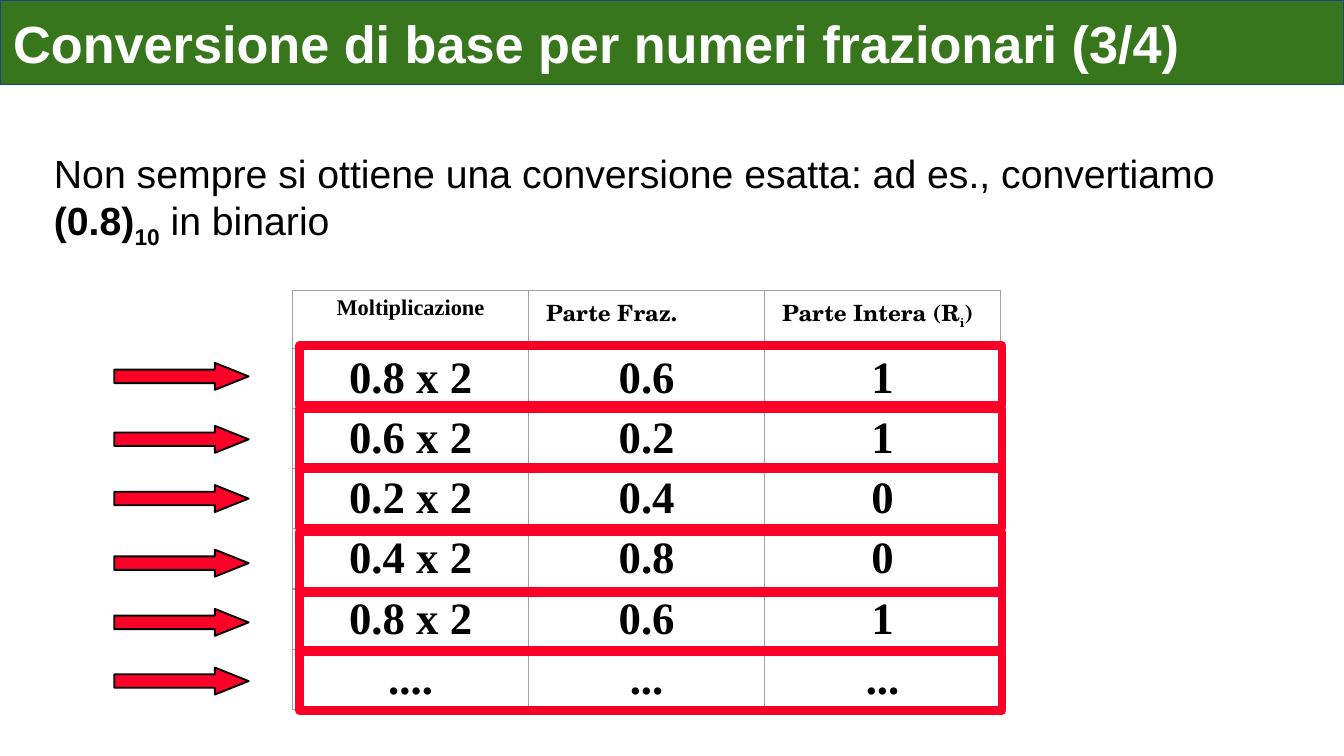
from lxml.etree import SubElement
from pptx import Presentation
from pptx.dml.color import RGBColor
from pptx.enum.shapes import MSO_SHAPE
from pptx.enum.text import MSO_ANCHOR, MSO_AUTO_SIZE, PP_ALIGN
from pptx.oxml import parse_xml
from pptx.oxml.ns import nsdecls, qn
from pptx.util import Cm, Pt

HUES = {"green": "38761D", "navy": "1C4587", "red": "FC0128",
        "grey": "A0A0A0", "black": "000000", "white": "FFFFFF"}
HEAD = ["Moltiplicazione", "Parte Fraz.", "Parte Intera (R"]
ROWS = [["0.8 x 2", "0.6", "1"],
        ["0.6 x 2", "0.2", "1"],
        ["0.2 x 2", "0.4", "0"],
        ["0.4 x 2", "0.8", "0"],
        ["0.8 x 2", "0.6", "1"],
        ["....", "...", "..."]]
TOPS = [6.53, 7.72, 8.84, 10.06, 11.18, 12.29]  # one per marked row


def hue(name):
    return RGBColor.from_string(HUES[name])


def style(run, size, font="Arial", color="black", bold=False, sub=False):
    run.font.size, run.font.name, run.font.bold = Pt(size), font, bold
    run.font.color.rgb = hue(color)
    if sub:
        run._r.get_or_add_rPr().set("baseline", "-25000")


def add_run(para, text, size, **look):
    run = para.add_run()
    run.text = text
    style(run, size, **look)


def pad(item, side, top, base):
    item.margin_left = item.margin_right = Cm(side)
    item.margin_top, item.margin_bottom = Cm(top), Cm(base)


def outline(shape, color, width):
    shape.line.color.rgb = hue(color)
    shape.line.width = Pt(width)


def add_title(slide, x, y, w, h):
    bar = slide.shapes.title
    bar.left, bar.top, bar.width, bar.height = Cm(x), Cm(y), Cm(w), Cm(h)
    bar.fill.solid()
    bar.fill.fore_color.rgb = hue("green")
    outline(bar, "navy", 0.75)
    frame = bar.text_frame
    frame.text = "Conversione di base per numeri frazionari (3/4)"
    frame.auto_size = MSO_AUTO_SIZE.NONE
    frame.vertical_anchor = MSO_ANCHOR.MIDDLE
    pad(frame, 0.25, 0.25, 0.25)
    para = frame.paragraphs[0]
    para.alignment = PP_ALIGN.LEFT
    style(para.runs[0], 28, color="white", bold=True)


def add_intro(slide, x, y, w, h):
    frame = slide.shapes.add_textbox(Cm(x), Cm(y), Cm(w), Cm(h)).text_frame
    frame.word_wrap = True
    pad(frame, 0.23, 0.1, 0.1)
    para = frame.paragraphs[0]
    add_run(para, "Non sempre si ottiene una conversione esatta: "
                  "ad es., convertiamo ", 21)
    add_run(para, "(0.8)", 21, bold=True)
    add_run(para, "10", 21, bold=True, sub=True)
    add_run(para, " in binario", 21)


def add_edges(cell):
    props = cell._tc.get_or_add_tcPr()
    for spot, side in enumerate("LRTB"):
        edge = parse_xml(f'<a:ln{side} {nsdecls("a")} w="9525"/>')
        fill = SubElement(edge, qn("a:solidFill"))
        SubElement(fill, qn("a:srgbClr")).set("val", HUES["grey"])
        props.insert(spot, edge)


def add_grid(slide, x, y, w, h, top):
    """Table in the given box; top is the height of the heading row."""
    grid = slide.shapes.add_table(len(ROWS) + 1, len(HEAD), Cm(x), Cm(y),
                                  Cm(w), Cm(h)).table
    grid.first_row = grid.horz_banding = False
    for col in grid.columns:
        col.width = Cm(w / len(HEAD))
    for r, texts in enumerate([HEAD] + ROWS):
        grid.rows[r].height = Cm(top if r == 0 else (h - top) / len(ROWS))
        for c, text in enumerate(texts):
            cell = grid.cell(r, c)
            cell.fill.background()
            add_edges(cell)
            pad(cell, 0.33, 0.1, 0)
            para = cell.text_frame.paragraphs[0]
            named = r == 0 and c > 0
            font = "TeX Gyre Schola" if named else "Times New Roman"
            para.alignment = PP_ALIGN.JUSTIFY if named else PP_ALIGN.CENTER
            add_run(para, text, 12 if r == 0 else 24, font=font, bold=True)
    # Subscript that closes the last heading
    para = grid.cell(0, len(HEAD) - 1).text_frame.paragraphs[0]
    add_run(para, "i", 12, font="TeX Gyre Schola", bold=True, sub=True)
    add_run(para, ")", 12, font="TeX Gyre Schola", bold=True)


def add_mark(slide, x, y, w, h):
    """Red frame around a row, with an arrow at the left of the box."""
    shapes = slide.shapes
    frame = shapes.add_shape(MSO_SHAPE.RECTANGLE, Cm(x + 3.5), Cm(y),
                             Cm(w - 3.5), Cm(h))
    frame.fill.background()
    outline(frame, "red", 4.5)
    arrow = shapes.add_shape(MSO_SHAPE.RIGHT_ARROW, Cm(x), Cm(y + 0.33),
                             Cm(2.54), Cm(0.51))
    arrow.adjustments[0], arrow.adjustments[1] = 0.5, 1.25
    arrow.fill.solid()
    arrow.fill.fore_color.rgb = hue("red")
    outline(arrow, "black", 1)
    frame.shadow.inherit = arrow.shadow.inherit = False


def main():
    deck = Presentation()
    deck.slide_width, deck.slide_height = Cm(25.4), Cm(14.29)
    slide = deck.slides.add_slide(deck.slide_layouts.get_by_name("Title Only"))
    add_title(slide, 0, 0, 25.4, 1.6)
    add_intro(slide, 0.79, 2.72, 22.45, 1.83)
    add_grid(slide, 5.53, 5.49, 13.38, 7.92, 1.09)
    for top in TOPS:
        add_mark(slide, 2.16, top, 16.78, 1.14)
    deck.save("out.pptx")


if __name__ == "__main__":
    main()
